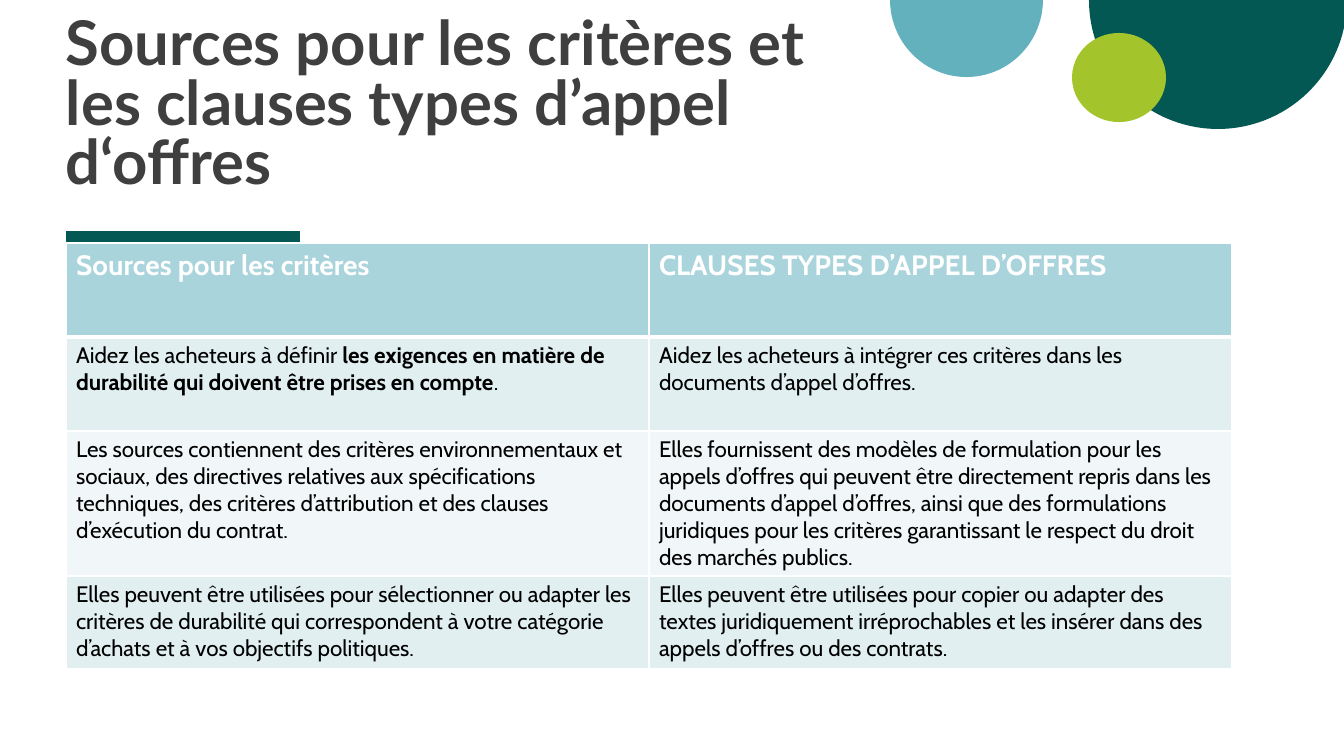
from dataclasses import dataclass

from lxml.etree import SubElement
from pptx import Presentation
from pptx.dml.color import RGBColor
from pptx.enum.shapes import MSO_CONNECTOR, MSO_SHAPE
from pptx.enum.text import MSO_ANCHOR
from pptx.oxml.ns import qn
from pptx.util import Emu, Pt


@dataclass(frozen=True)
class Theme:
    """Colours, fonts and sizes of the slide."""
    dark: str = "035854"
    teal: str = "64B1BE"
    lime: str = "A3C42A"
    white: str = "FFFFFF"
    black: str = "000000"
    title_ink: str = "3F3F3F"
    header: str = "A9D4DB"
    bands: tuple = ("E1EFF1", "F1F7F8")
    title_font: str = "Lato"
    body_font: str = "Cabin"
    title_size: int = 44
    header_size: int = 20
    body_size: int = 16
    rule: int = 8
    border: int = 1
    header_border: int = 3


T = Theme()
TITLE = "Sources pour les critères et les clauses types d’appel d‘offres"
ROWS = [
    ("Sources pour les critères", "CLAUSES TYPES D’APPEL D’OFFRES"),
    (
        [
            ("Aidez les acheteurs à définir ", False),
            ("les exigences en matière de durabilité qui doivent être prises en compte", True),
            (".", False),
        ],
        "Aidez les acheteurs à intégrer ces critères dans les documents d’appel d’offres.",
    ),
    (
        "Les sources contiennent des critères environnementaux et sociaux, des directives "
        "relatives aux spécifications techniques, des critères d’attribution et des clauses "
        "d’exécution du contrat.",
        "Elles fournissent des modèles de formulation pour les appels d’offres qui peuvent être "
        "directement repris dans les documents d’appel d’offres, ainsi que des formulations "
        "juridiques pour les critères garantissant le respect du droit des marchés publics.",
    ),
    (
        "Elles peuvent être utilisées pour sélectionner ou adapter les critères de durabilité "
        "qui correspondent à votre catégorie d’achats et à vos objectifs politiques.",
        "Elles peuvent être utilisées pour copier ou adapter des textes juridiquement "
        "irréprochables et les insérer dans des appels d’offres ou des contrats.",
    ),
]
ROW_HEIGHTS = (94, 94, 145, 93)


def px(n):
    """Turn pixels into EMU."""
    return Emu(round(n * 914400 / 100.8))


def set_attrs(obj, values):
    """Set each attribute of obj from a dict."""
    for name, value in values.items():
        setattr(obj, name, value)


def add_run(p, text, color, **font):
    """Add a formatted run to a paragraph."""
    r = p.add_run()
    r.text = text
    set_attrs(r.font, font)
    r.font.color.rgb = RGBColor.from_string(color)


def add_disc(s, kind, box, color, adjustments=()):
    """Add a plain filled round shape."""
    sp = s.shapes.add_shape(kind, *map(px, box))
    sp.shadow.inherit = False
    sp.fill.solid()
    sp.fill.fore_color.rgb = RGBColor.from_string(color)
    sp.line.fill.background()
    for i, value in enumerate(adjustments):
        sp.adjustments[i] = value


def add_rule(s, x1, x2, y):
    """Add the thick horizontal rule under the title."""
    line = s.shapes.add_connector(MSO_CONNECTOR.STRAIGHT, px(x1), px(y), px(x2), px(y))
    line.line.width = Pt(T.rule)
    line.line.color.rgb = RGBColor.from_string(T.dark)
    SubElement(line._element.spPr, qn("a:effectLst"))


def add_title(s, box):
    """Add the bottom-anchored title."""
    tf = s.shapes.add_textbox(*map(px, box)).text_frame
    set_attrs(tf, {
        "word_wrap": True, "vertical_anchor": MSO_ANCHOR.BOTTOM,
        "margin_left": 0, "margin_top": 0, "margin_right": 0, "margin_bottom": 0,
    })
    p = tf.paragraphs[0]
    p.line_spacing = 0.8
    add_run(p, TITLE, T.title_ink, name=T.title_font, size=Pt(T.title_size), bold=True)


def add_borders(cell, widths):
    """Draw white cell borders with the given widths in points."""
    tcPr = cell._tc.get_or_add_tcPr()
    for side, width in widths.items():
        ln = SubElement(tcPr, qn(f"a:ln{side}"), w=str(Pt(width)))
        fill = SubElement(ln, qn("a:solidFill"))
        SubElement(fill, qn("a:srgbClr"), val=T.white)


def fill_cell(cell, content, row):
    """Write and format one table cell."""
    head = row == 0
    top = T.header_border if row == 1 else T.border
    bottom = T.header_border if head else T.border
    add_borders(cell, {"L": T.border, "R": T.border, "T": top, "B": bottom})
    cell.fill.solid()
    color = T.header if head else T.bands[(row - 1) % 2]
    cell.fill.fore_color.rgb = RGBColor.from_string(color)
    runs = [(content, head)] if isinstance(content, str) else content
    ink, size = (T.white, T.header_size) if head else (T.black, T.body_size)
    for text, bold in runs:
        add_run(cell.text_frame.paragraphs[0], text, ink,
                name=T.body_font, size=Pt(size), bold=bold)


def add_comparison(s, x, y, col_width):
    """Add the two-column comparison table."""
    frame = s.shapes.add_table(len(ROWS), 2, px(x), px(y), px(2 * col_width), px(sum(ROW_HEIGHTS)))
    table = frame.table
    table.horz_banding = False
    for col in table.columns:
        col.width = px(col_width)
    for i, (contents, height) in enumerate(zip(ROWS, ROW_HEIGHTS)):
        table.rows[i].height = px(height)
        for j, content in enumerate(contents):
            fill_cell(table.cell(i, j), content, i)


def main():
    """Build and save the slide."""
    prs = Presentation()
    set_attrs(prs, {"slide_width": px(1344), "slide_height": px(756)})
    s = prs.slides.add_slide(prs.slide_layouts[6])
    half = (0, 108)
    add_disc(s, MSO_SHAPE.PIE, (1089, -129, 258, 258), T.dark, half)
    add_rule(s, 66, 300, 237)
    add_disc(s, MSO_SHAPE.PIE, (890, -78, 153, 155), T.teal, half)
    add_disc(s, MSO_SHAPE.OVAL, (1072, 33, 94, 89), T.lime)
    add_title(s, (66, 21, 748, 175))
    add_comparison(s, 66, 243, 583)
    prs.save("out.pptx")


if __name__ == "__main__":
    main()
